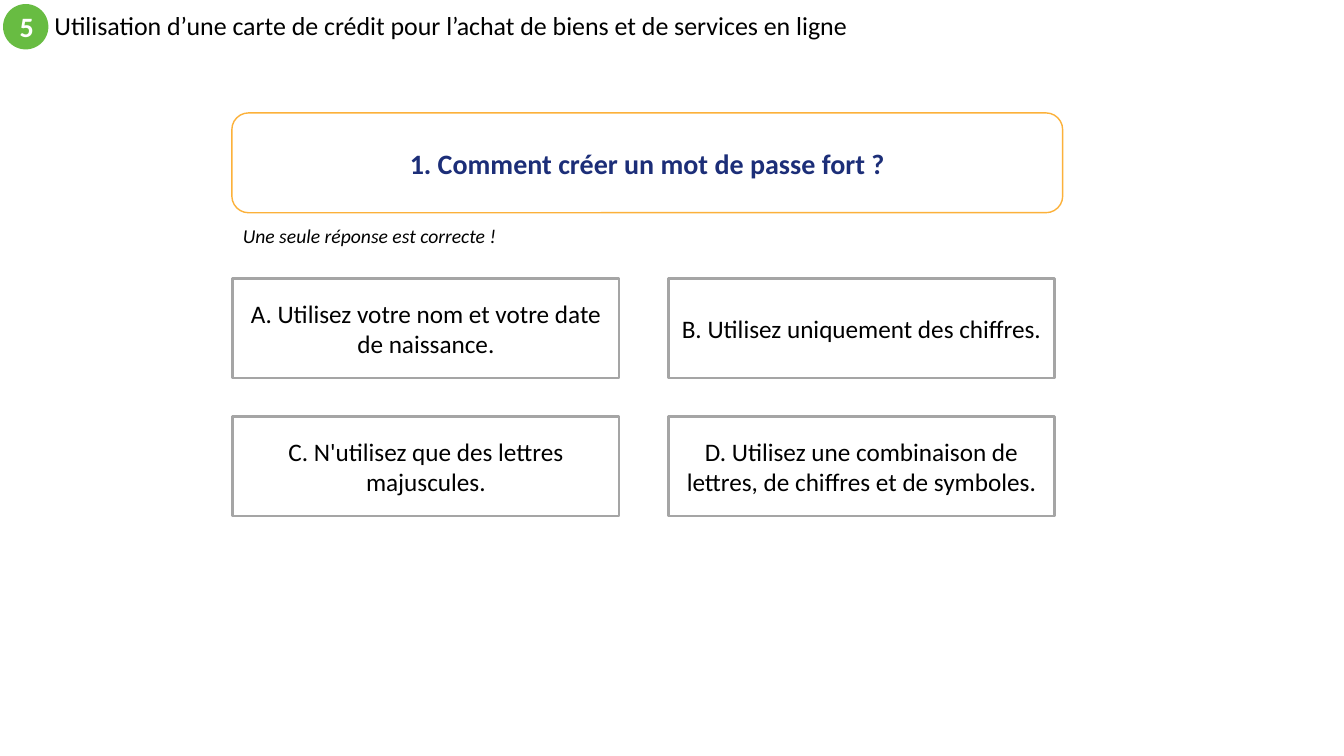
import pptx
import pptx.dml.color
import pptx.enum.shapes
import pptx.enum.text
import pptx.util

Inches = pptx.util.Inches
RGBColor = pptx.dml.color.RGBColor
MSO_SHAPE = pptx.enum.shapes.MSO_SHAPE
ANCHOR = pptx.enum.text.MSO_ANCHOR
ALIGN = pptx.enum.text.PP_ALIGN

FONT = "Calibri"
GREEN = RGBColor(0x68, 0xBC, 0x42)
ORANGE = RGBColor(0xFC, 0xB1, 0x3A)
NAVY = RGBColor(0x1C, 0x2E, 0x78)
GREY = RGBColor(0xA5, 0xA5, 0xA5)
BLACK = RGBColor(0, 0, 0)
WHITE = RGBColor(0xFF, 0xFF, 0xFF)

ANSWERS = [
    "A. Utilisez votre nom et votre date de naissance.",
    "B. Utilisez uniquement des chiffres.",
    "C. N'utilisez que des lettres majuscules.",
    "D. Utilisez une combinaison de lettres, de chiffres et de symboles.",
]


def write(sp, text, size=18, color=BLACK, bold=False, italic=False,
          align=ALIGN.CENTER, anchor=ANCHOR.MIDDLE, spacing=None):
    """Put one formatted paragraph into a shape."""
    tf = sp.text_frame
    tf.word_wrap = True
    tf.auto_size = pptx.enum.text.MSO_AUTO_SIZE.NONE
    tf.vertical_anchor = anchor
    p = tf.paragraphs[0]
    p.alignment = align
    p.line_spacing = spacing
    r = p.add_run()
    r.text = text
    r.font.name = FONT
    r.font.size = pptx.util.Pt(size)
    r.font.bold = bold
    r.font.italic = italic
    r.font.color.rgb = color


def add_title(s, text, x, y, w, h):
    sp = s.shapes.title
    sp.left, sp.top, sp.width, sp.height = map(Inches, (x, y, w, h))
    write(sp, text, size=18.5, align=ALIGN.LEFT, spacing=0.9)


def add_box(s, kind, x, y, w, h, fill=WHITE, line=None, weight=1):
    sp = s.shapes.add_shape(kind, Inches(x), Inches(y), Inches(w), Inches(h))
    sp.shadow.inherit = False
    sp.fill.solid()
    sp.fill.fore_color.rgb = fill
    if line is None:
        sp.line.fill.background()
    else:
        sp.line.color.rgb = line
        sp.line.width = pptx.util.Pt(weight)
    return sp


def add_answers(s, answers, x, y, w, h, dx, dy):
    """Lay the answers out in two columns, row by row."""
    for i, text in enumerate(answers):
        row, col = divmod(i, 2)
        sp = add_box(s, MSO_SHAPE.RECTANGLE, x + col * dx, y + row * dy, w, h,
                     line=GREY, weight=2)
        write(sp, text)


def main():
    prs = pptx.Presentation()
    prs.slide_width, prs.slide_height = Inches(13.33), Inches(7.5)
    s = prs.slides.add_slide(prs.slide_layouts.get_by_name("Title Only"))

    # Heading with its section number
    add_title(s, "Utilisation d’une carte de crédit pour l’achat de biens "
                 "et de services en ligne", 0.44, 0.04, 8.58, 0.45)
    badge = add_box(s, MSO_SHAPE.OVAL, 0.03, 0.04, 0.45, 0.45, fill=GREEN)
    write(badge, "5", size=20, color=WHITE, bold=True)

    # Question and hint
    question = add_box(s, MSO_SHAPE.ROUNDED_RECTANGLE, 2.3, 1.12, 8.24, 0.99,
                       line=ORANGE)
    write(question, "1. Comment créer un mot de passe fort ?", size=20,
          color=NAVY, bold=True)
    hint = s.shapes.add_textbox(Inches(2.31), Inches(2.17), Inches(2.8), Inches(0.34))
    write(hint, "Une seule réponse est correcte !", size=14, italic=True,
          align=ALIGN.LEFT, anchor=ANCHOR.TOP)

    # Answer grid
    add_answers(s, ANSWERS, 2.31, 2.76, 3.83, 0.99, dx=4.32, dy=1.37)

    prs.save("out.pptx")


if __name__ == "__main__":
    main()
